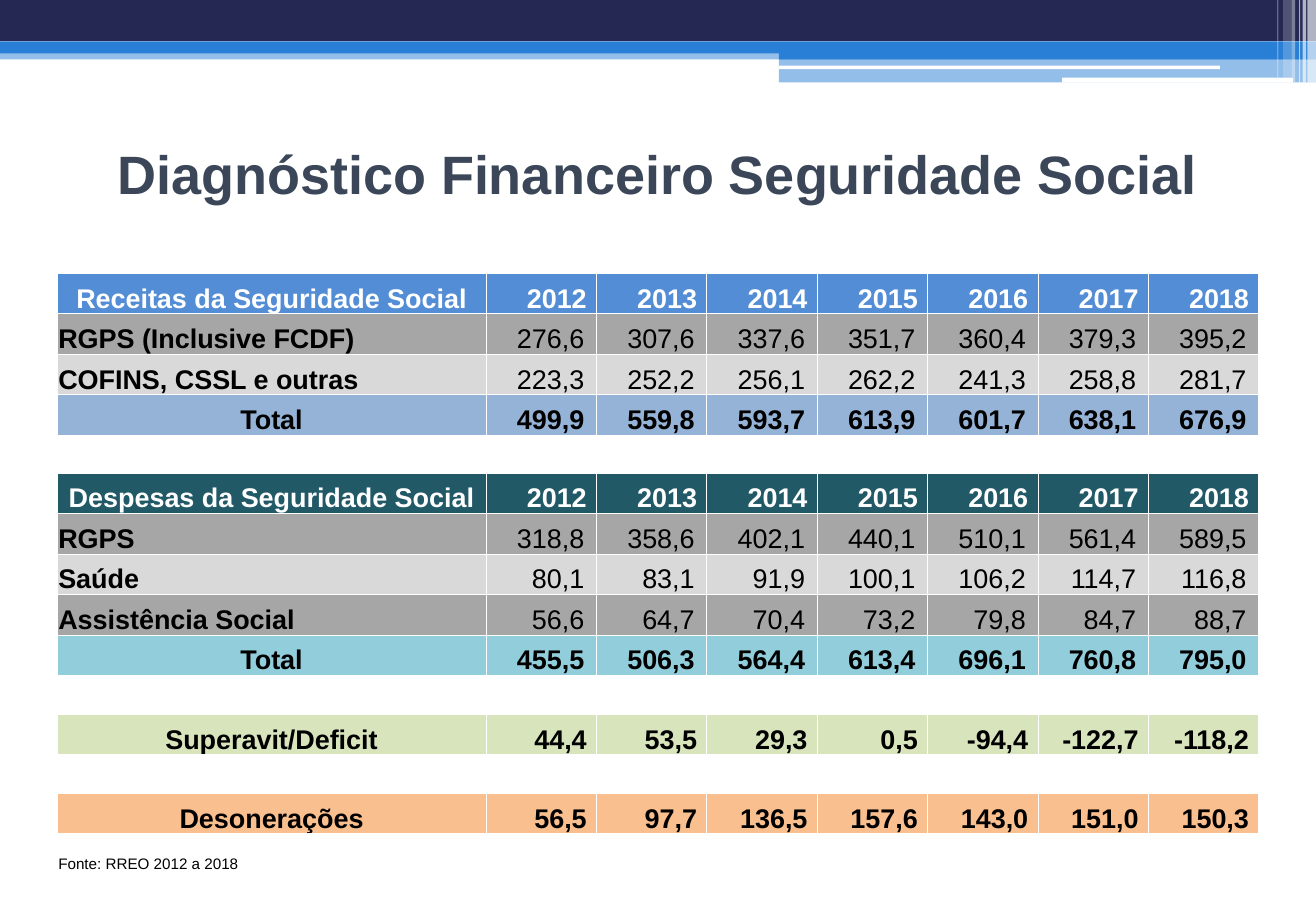
from lxml import etree
from pptx import Presentation
from pptx.dml.color import RGBColor
from pptx.enum.shapes import MSO_SHAPE
from pptx.enum.text import MSO_ANCHOR, PP_ALIGN
from pptx.oxml.ns import qn
from pptx.util import Inches, Pt

RECT, ROUNDED = MSO_SHAPE.RECTANGLE, MSO_SHAPE.ROUNDED_RECTANGLE
LEFT, CENTER, RIGHT = PP_ALIGN.LEFT, PP_ALIGN.CENTER, PP_ALIGN.RIGHT
MIDDLE, BOTTOM = MSO_ANCHOR.MIDDLE, MSO_ANCHOR.BOTTOM

WHITE = RGBColor(0xFF, 0xFF, 0xFF)
BLACK = RGBColor(0x00, 0x00, 0x00)
NAVY = RGBColor(0x24, 0x28, 0x52)
BLUE = RGBColor(0x29, 0x7F, 0xD5)
SLATE = RGBColor(0x3B, 0x47, 0x59)
HEAD_BLUE = RGBColor(0x53, 0x8D, 0xD5)
TOTAL_BLUE = RGBColor(0x95, 0xB3, 0xD7)
HEAD_TEAL = RGBColor(0x21, 0x59, 0x67)
TOTAL_TEAL = RGBColor(0x92, 0xCD, 0xDC)
DARK_GRAY = RGBColor(0xA6, 0xA6, 0xA6)
LIGHT_GRAY = RGBColor(0xD9, 0xD9, 0xD9)
GREEN = RGBColor(0xD8, 0xE4, 0xBC)
ORANGE = RGBColor(0xFA, 0xBF, 0x8F)

FONT = "Arial"
BODY_SIZE = 16
YEARS = "2012 2013 2014 2015 2016 2017 2018"

# preset, left, top, width, height, colour, opacity in percent
BANNER = [
    (RECT, 0, 0.4, 10.83, 0.09, BLUE, 50),
    (RECT, 0, 0, 10.83, 0.34, NAVY, 100),
    (RECT, 0, 0.34, 10.83, 0.1, BLUE, 100),
    (RECT, 6.41, 0.39, 4.42, 0.1, BLUE, 100),
    (RECT, 6.41, 0.48, 4.42, 0.2, BLUE, 50),
    (ROUNDED, 6.41, 0.54, 3.63, 0.03, WHITE, 100),
    (ROUNDED, 8.74, 0.64, 1.9, 0.04, WHITE, 100),
    (RECT, 10.76, 0, 0.07, 0.68, WHITE, 65),
    (RECT, 10.72, 0, 0.03, 0.68, WHITE, 65),
    (RECT, 10.69, 0, 0.01, 0.68, WHITE, 60),
    (RECT, 10.63, 0, 0.03, 0.68, WHITE, 40),
    (RECT, 10.56, 0, 0.07, 0.64, WHITE, 20),
    (RECT, 10.51, 0, 0.01, 0.64, WHITE, 30),
]

# Row kinds: label alignment, text colour, bold values, right margin of values
HEAD = (CENTER, WHITE, True, 0.08)
ITEM = (LEFT, BLACK, False, 0.1)
TOTAL = (CENTER, BLACK, True, 0.1)
RESULT = (CENTER, BLACK, True, 0.08)

# kind, fill, label, values; a number stands for a blank row of that height
ROWS = [
    (HEAD, HEAD_BLUE, "Receitas da Seguridade Social", YEARS),
    (ITEM, DARK_GRAY, "RGPS (Inclusive FCDF)", "276,6 307,6 337,6 351,7 360,4 379,3 395,2"),
    (ITEM, LIGHT_GRAY, "COFINS, CSSL e outras", "223,3 252,2 256,1 262,2 241,3 258,8 281,7"),
    (TOTAL, TOTAL_BLUE, "Total", "499,9 559,8 593,7 613,9 601,7 638,1 676,9"),
    0.31,
    (HEAD, HEAD_TEAL, "Despesas da Seguridade Social", YEARS),
    (ITEM, DARK_GRAY, "RGPS", "318,8 358,6 402,1 440,1 510,1 561,4 589,5"),
    (ITEM, LIGHT_GRAY, "Saúde", "80,1 83,1 91,9 100,1 106,2 114,7 116,8"),
    (ITEM, DARK_GRAY, "Assistência Social", "56,6 64,7 70,4 73,2 79,8 84,7 88,7"),
    (TOTAL, TOTAL_TEAL, "Total", "455,5 506,3 564,4 613,4 696,1 760,8 795,0"),
    0.32,
    (RESULT, GREEN, "Superavit/Deficit", "44,4 53,5 29,3 0,5 -94,4 -122,7 -118,2"),
    0.32,
    (RESULT, ORANGE, "Desonerações", "56,5 97,7 136,5 157,6 143,0 151,0 150,3"),
    0.32,
]
TABLE_LEFT, TABLE_TOP, TABLE_WIDTH, TABLE_HEIGHT = 0.47, 2.25, 9.89, 4.94
LABEL_WIDTH = 3.53


def write_text(tf, text, size=BODY_SIZE, color=BLACK, bold=False, align=LEFT):
    p = tf.paragraphs[0]
    p.alignment = align
    r = p.add_run()
    r.text = text
    r.font.name = FONT
    r.font.size = Pt(size)
    r.font.bold = bold
    r.font.color.rgb = color


def add_bar(s, preset, left, top, width, height, color, opacity):
    sp = s.shapes.add_shape(preset, Inches(left), Inches(top), Inches(width), Inches(height))
    sp.shadow.inherit = False
    sp.line.fill.background()
    sp.fill.solid()
    sp.fill.fore_color.rgb = color
    if opacity < 100:
        clr = sp.fill._xPr.find(".//" + qn("a:srgbClr"))
        etree.SubElement(clr, qn("a:alpha"), val=str(opacity * 1000))


def add_title(s, text):
    sp = s.shapes.add_textbox(Inches(0.54), Inches(0.93), Inches(9.75), Inches(0.99))
    tf = sp.text_frame
    tf.word_wrap = True
    tf.vertical_anchor = MIDDLE
    write_text(tf, text, size=32, color=SLATE, bold=True, align=CENTER)


def prepare_cell(cell, right=0.01):
    cell.vertical_anchor = BOTTOM
    cell.margin_left = cell.margin_top = Inches(0.01)
    cell.margin_right, cell.margin_bottom = Inches(right), 0
    cell.fill.background()


def color_cell(cell, color):
    """Fill the cell and draw thin white borders, which must precede the fill."""
    tc_pr = cell._tc.get_or_add_tcPr()
    for i, side in enumerate(("lnL", "lnR", "lnT", "lnB")):
        ln = etree.Element(qn("a:" + side), w=str(Pt(0.5)))
        fill = etree.SubElement(ln, qn("a:solidFill"))
        etree.SubElement(fill, qn("a:srgbClr"), val=str(WHITE))
        tc_pr.insert(i, ln)
    cell.fill.solid()
    cell.fill.fore_color.rgb = color


def fill_blank_row(cells):
    for cell in cells:
        prepare_cell(cell)
        end = etree.SubElement(cell.text_frame.paragraphs[0]._p, qn("a:endParaRPr"))
        end.set("sz", str(BODY_SIZE * 100))


def fill_row(cells, kind, fill, label, values):
    label_align, color, bold, right = kind
    for i, (cell, text) in enumerate(zip(cells, [label] + values.split())):
        is_label = i == 0
        prepare_cell(cell, 0.01 if is_label else right)
        color_cell(cell, fill)
        write_text(cell.text_frame, text, color=color, bold=is_label or bold,
                   align=label_align if is_label else RIGHT)


def add_finance_table(s):
    years = len(YEARS.split())
    blanks = [row for row in ROWS if isinstance(row, float)]
    row_height = (TABLE_HEIGHT - sum(blanks)) / (len(ROWS) - len(blanks))
    table = s.shapes.add_table(len(ROWS), years + 1, Inches(TABLE_LEFT), Inches(TABLE_TOP),
                               Inches(TABLE_WIDTH), Inches(TABLE_HEIGHT)).table
    table.first_row = table.horz_banding = False
    for i, column in enumerate(table.columns):
        column.width = Inches((TABLE_WIDTH - LABEL_WIDTH) / years if i else LABEL_WIDTH)
    for table_row, row in zip(table.rows, ROWS):
        if isinstance(row, float):
            table_row.height = Inches(row)
            fill_blank_row(table_row.cells)
        else:
            table_row.height = Inches(row_height)
            fill_row(table_row.cells, *row)
    source = table.cell(len(ROWS) - 1, 0).text_frame
    write_text(source, "Fonte: RREO 2012 a 2018", size=9)


def main():
    prs = Presentation()
    prs.slide_width, prs.slide_height = Inches(10.83), Inches(7.5)
    s = prs.slides.add_slide(prs.slide_layouts[6])
    for bar in BANNER:
        add_bar(s, *bar)
    add_title(s, "Diagnóstico Financeiro Seguridade Social")
    add_finance_table(s)
    prs.save("out.pptx")


if __name__ == "__main__":
    main()
